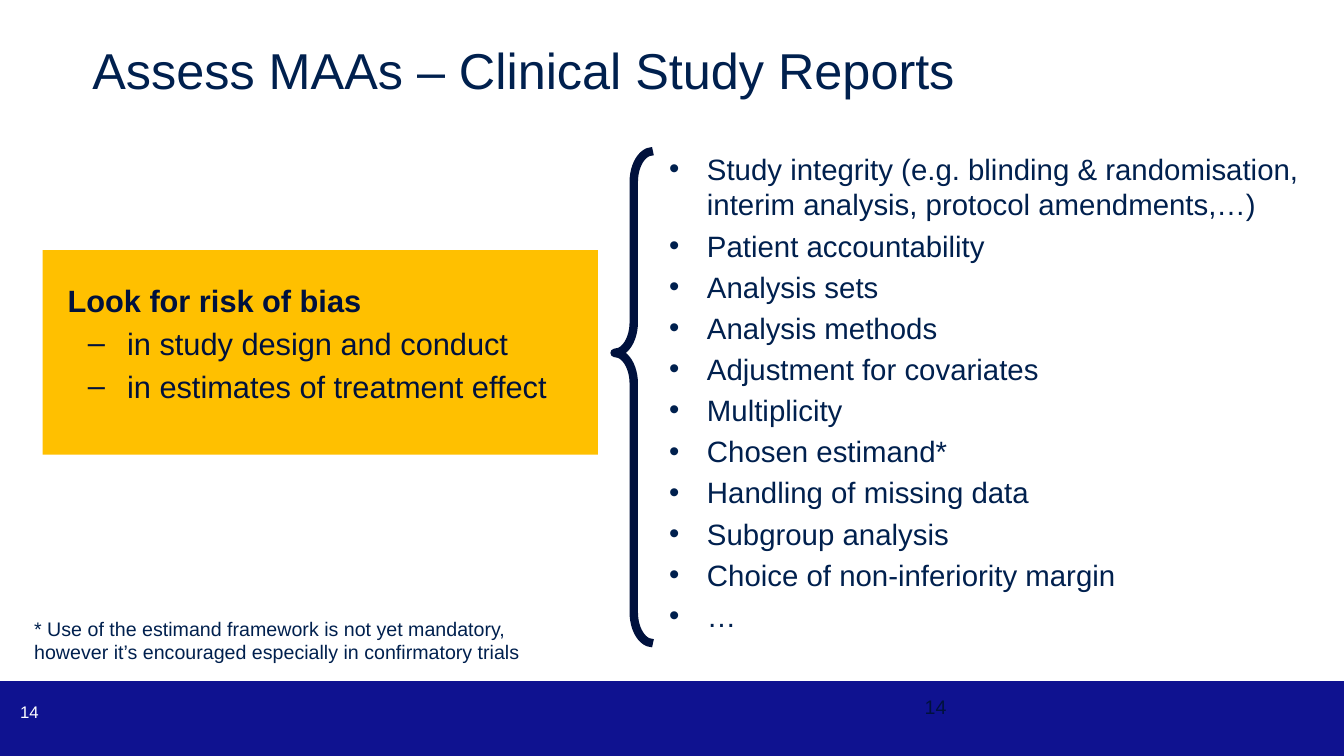
from lxml import etree
from pptx import Presentation
from pptx.dml.color import RGBColor
from pptx.enum.shapes import MSO_SHAPE
from pptx.enum.text import MSO_ANCHOR
from pptx.oxml.ns import qn
from pptx.util import Pt

RECT, BRACE = MSO_SHAPE.RECTANGLE, MSO_SHAPE.LEFT_BRACE
TOP, MIDDLE = MSO_ANCHOR.TOP, MSO_ANCHOR.MIDDLE

W, H = 960, 540
NAVY, INK, BLUE, AMBER, WHITE = "00204E", "00113D", "0F1290", "FFC000", "FFFFFF"
TITLE = "Assess MAAs – Clinical Study Reports"
BIAS_HEAD = "Look for risk of bias"
BIAS_ITEMS = ["in study design and conduct", "in estimates of treatment effect"]
CHECKS = [
    "Study integrity (e.g. blinding & randomisation, interim analysis, protocol amendments,…)",
    "Patient accountability",
    "Analysis sets",
    "Analysis methods",
    "Adjustment for covariates",
    "Multiplicity",
    "Chosen estimand*",
    "Handling of missing data",
    "Subgroup analysis",
    "Choice of non-inferiority margin",
    "…",
]
FOOTNOTE = ("* Use of the estimand framework is not yet mandatory, "
            "however it’s encouraged especially in confirmatory trials")
PAGE = "14"
LIST_TOP, LIST_H = 108, 351.5
BAND_TOP = 486.5


def rgb(value):
    return RGBColor.from_string(value)


def add_shape(kind, x, y, w, h, fill=None, line=None, width=0):
    sp = s.shapes.add_shape(kind, Pt(x), Pt(y), Pt(w), Pt(h))
    sp.shadow.inherit = False
    if fill:
        sp.fill.solid()
        sp.fill.fore_color.rgb = rgb(fill)
    else:
        sp.fill.background()
    if line:
        sp.line.color.rgb = rgb(line)
        sp.line.width = Pt(width)
    else:
        sp.line.fill.background()
    return sp


def add_box(x, y, w, h, anchor=TOP):
    tf = s.shapes.add_textbox(Pt(x), Pt(y), Pt(w), Pt(h)).text_frame
    tf.word_wrap = True
    tf.vertical_anchor = anchor
    tf.margin_left = tf.margin_top = tf.margin_right = tf.margin_bottom = 0
    return tf


def add_text(tf, text, size, color, bold=False, before=0, spacing=1.0,
             bullet=None, left=0, hang=0):
    p = tf.paragraphs[0] if not tf.paragraphs[0].runs else tf.add_paragraph()
    p.space_before = Pt(before)
    p.line_spacing = spacing
    r = p.add_run()
    r.text = text
    r.font.name = "Arial"
    r.font.size = Pt(size)
    r.font.bold = bold
    r.font.color.rgb = rgb(color)
    if bullet:
        pPr = p._p.get_or_add_pPr()
        pPr.set("marL", str(Pt(left)))
        pPr.set("indent", str(-Pt(hang)))
        etree.SubElement(pPr, qn("a:buFont")).set("typeface", "Arial")
        etree.SubElement(pPr, qn("a:buChar")).set("char", bullet)


prs = Presentation()
prs.slide_width, prs.slide_height = Pt(W), Pt(H)
s = prs.slides.add_slide(prs.slide_layouts[6])

add_shape(RECT, 0, BAND_TOP, W, H - BAND_TOP, fill=BLUE)
add_text(add_box(14.4, BAND_TOP, 42.5, 43.2, MIDDLE), PAGE, 12, WHITE)
add_text(add_box(660.5, 496, 60, 18), PAGE, 14, INK)

add_text(add_box(66, 28.1, 827, 57), TITLE, 36, NAVY)

add_shape(RECT, 30.4, 178.6, 396.7, 146.2, fill=AMBER)
tf = add_box(48.3, 200.9, 361, 153)
add_text(tf, BIAS_HEAD, 22, INK, bold=True, before=4.4)
for item in BIAS_ITEMS:
    add_text(tf, item, 22, INK, before=4.4, bullet="–", left=42.5, hang=28.1)

tf = add_box(478, LIST_TOP, 482, LIST_H)
for check in CHECKS:
    add_text(tf, check, 21, NAVY, before=4.2, bullet="•", left=27, hang=27)
brace = add_shape(BRACE, 439, LIST_TOP, 27.4, LIST_H, line=INK, width=6)
brace.adjustments[0], brace.adjustments[1] = 0.8, 0.41

add_text(add_box(24.4, 440.6, 361, 50), FOOTNOTE, 14, NAVY, before=2.8)

prs.save("out.pptx")
